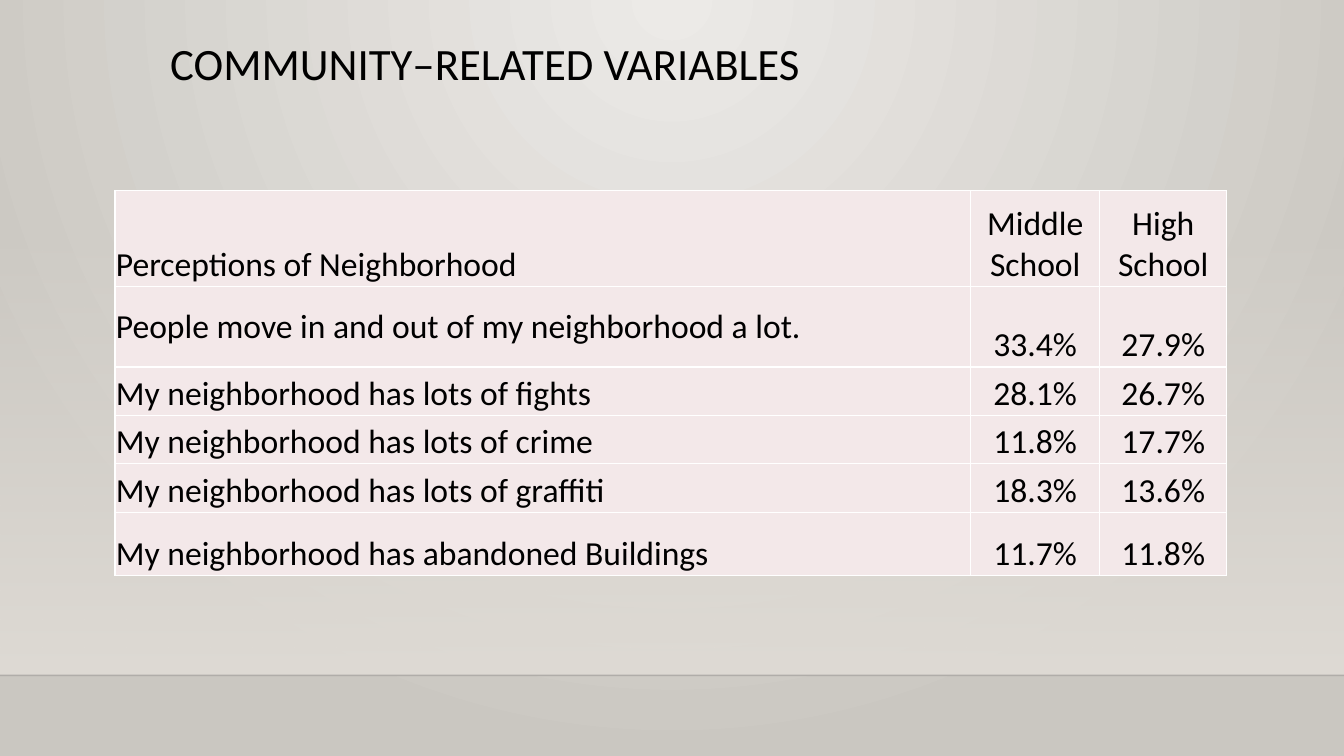
"""Build a slide with a table of how students see their neighborhood."""
from dataclasses import dataclass

from lxml.etree import SubElement as Sub
from pptx import Presentation
from pptx.dml.color import RGBColor as Rgb
from pptx.enum.shapes import MSO_CONNECTOR as Link, MSO_SHAPE as Shape
from pptx.enum.text import MSO_ANCHOR as Anchor, PP_ALIGN as Align
from pptx.oxml import parse_xml
from pptx.oxml.ns import nsdecls, qn
from pptx.util import Pt


@dataclass(frozen=True)
class Theme:
    font: str = "Calibri"
    title: int = 32
    body: int = 24
    ink: str = "000000"
    cell: str = "F3E8E9"
    rule: str = "FFFFFF"
    glow: str = "ECEAE7"
    edge: str = "CAC7C1"
    wall: str = "DFDBD5"
    seam: str = "000001"


THEME = Theme()
WIDTH, HEIGHT = 960, 540
FLOOR = 482.4
COLS = (611.3, 92.2, 90.7)
ROWS = (
    (68.4, "Perceptions of Neighborhood", "Middle School", "High School"),
    (57.6, "People move in and out of my neighborhood a lot.", "33.4%", "27.9%"),
    (34.6, "My neighborhood has lots of fights", "28.1%", "26.7%"),
    (34.6, "My neighborhood has lots of crime", "11.8%", "17.7%"),
    (34.6, "My neighborhood has lots of graffiti", "18.3%", "13.6%"),
    (45.4, "My neighborhood has abandoned Buildings", "11.7%", "11.8%"),
)


def blend(fill, first, last):
    fill.gradient()
    for stop, tint, place in zip(fill.gradient_stops, (first, last), (0, 1)):
        stop.color.rgb = Rgb.from_string(tint)
        stop.position = place


def fade(root, share):
    tint = root.find(".//" + qn("a:srgbClr"))
    Sub(tint, qn("a:alpha"), val=str(share * 1000))


def write(frame, text, size, align=Align.LEFT):
    para = frame.paragraphs[0]
    para.alignment = align
    run = para.add_run()
    run.text = text
    run.font.name = THEME.font
    run.font.size = Pt(size)
    run.font.color.rgb = Rgb.from_string(THEME.ink)
    return para


def paint(slide):
    fill = slide.background.fill
    blend(fill, THEME.glow, THEME.edge)
    grad = slide.element.find(".//" + qn("a:gradFill"))
    grad.remove(grad.find(qn("a:lin")))
    halo = Sub(grad, qn("a:path"), path="circle")
    Sub(halo, qn("a:fillToRect"), l="43000", t="0", r="43000", b="100000")


def add_wall(slide, top):
    wall = slide.shapes.add_shape(
        Shape.RECTANGLE, Pt(0), Pt(top), Pt(WIDTH), Pt(FLOOR - top))
    wall.shadow.inherit = False
    wall.line.fill.background()
    blend(wall.fill, THEME.wall, THEME.wall)
    wall.fill.gradient_angle = 270
    fade(wall.element, 0)


def add_seam(slide):
    seam = slide.shapes.add_connector(
        Link.STRAIGHT, Pt(0), Pt(FLOOR), Pt(WIDTH), Pt(FLOOR))
    seam.line.width = Pt(1)
    seam.line.color.rgb = Rgb.from_string(THEME.seam)
    fade(seam.element, 20)
    Sub(seam.element.spPr, qn("a:effectLst"))


def add_title(slide, text):
    box = slide.shapes.add_textbox(Pt(114.5), Pt(26.6), Pt(756), Pt(67.7))
    frame = box.text_frame
    frame.word_wrap = True
    frame.vertical_anchor = Anchor.TOP
    write(frame, text, THEME.title).line_spacing = 0.9


def frame_cell(cell):
    props = cell._tc.get_or_add_tcPr()
    for spot, side in enumerate("LRTB"):
        props.insert(spot, parse_xml(
            f'<a:ln{side} {nsdecls("a")} w="{Pt(1)}"><a:solidFill>'
            f'<a:srgbClr val="{THEME.rule}"/></a:solidFill></a:ln{side}>'))


def fill_cell(cell, text, align, anchor):
    cell.margin_left = cell.margin_right = Pt(0.7)
    cell.margin_top = cell.margin_bottom = Pt(0.7)
    cell.vertical_anchor = anchor
    cell.fill.solid()
    cell.fill.fore_color.rgb = Rgb.from_string(THEME.cell)
    frame_cell(cell)
    write(cell.text_frame, text, THEME.body, align)


def add_grid(slide):
    tall = sum(row[0] for row in ROWS)
    grid = slide.shapes.add_table(
        len(ROWS), len(COLS), Pt(82.1), Pt(136.1), Pt(sum(COLS)), Pt(tall)).table
    for col, width in zip(grid.columns, COLS):
        col.width = Pt(width)
    for r, (height, *texts) in enumerate(ROWS):
        grid.rows[r].height = Pt(height)
        for c, text in enumerate(texts):
            align = Align.CENTER if c else Align.LEFT
            anchor = Anchor.MIDDLE if (r, c) == (1, 0) else Anchor.BOTTOM
            fill_cell(grid.cell(r, c), text, align, anchor)


def main():
    deck = Presentation()
    deck.slide_width, deck.slide_height = Pt(WIDTH), Pt(HEIGHT)
    slide = deck.slides.add_slide(deck.slide_layouts[6])
    paint(slide)
    add_wall(slide, 159.1)
    add_seam(slide)
    add_title(slide, "COMMUNITY–RELATED VARIABLES")
    add_grid(slide)
    deck.save("out.pptx")


if __name__ == "__main__":
    main()
